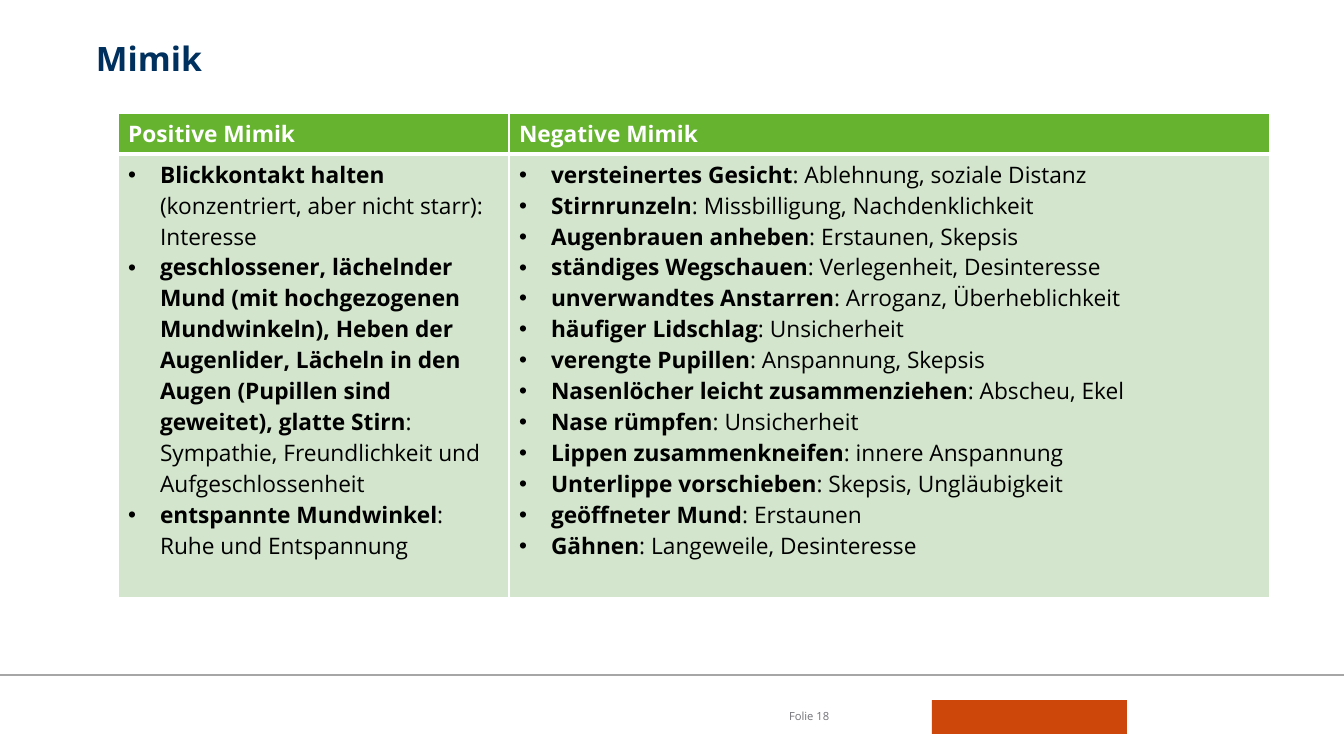
"""Build the slide "Mimik" comparing positive and negative facial expressions."""
from lxml import etree
from pptx import Presentation
from pptx.dml.color import RGBColor
from pptx.enum.shapes import MSO_CONNECTOR, MSO_SHAPE
from pptx.enum.text import MSO_ANCHOR
from pptx.oxml import parse_xml
from pptx.oxml.ns import nsdecls, qn
from pptx.util import Emu, Pt

STRAIGHT = MSO_CONNECTOR.STRAIGHT
RECTANGLE = MSO_SHAPE.RECTANGLE
TOP, MIDDLE = MSO_ANCHOR.TOP, MSO_ANCHOR.MIDDLE

THEME = {
    "font": "Open Sans",
    "navy": "00305D", "orange": "CE470A", "grey": "727277", "rule": "A6A6A6",
    "white": "FFFFFF", "black": "000000", "green": "65B32E", "pale": "D3E5CD",
    "title": 24, "body": 16.2, "page": 8,
}


def px(length):
    return Emu(round(length * 914400 / 100.8))


def style(run, size, color, bold):
    run.font.name = THEME["font"]
    run.font.size = Pt(THEME[size])
    run.font.color.rgb = RGBColor.from_string(THEME[color])
    run.font.bold = bold


prs = Presentation()
prs.slide_width, prs.slide_height = px(1344), px(756)
slide = prs.slides.add_slide(prs.slide_layouts[6])

footer_rule = slide.shapes.add_connector(STRAIGHT, px(0), px(675), px(1344), px(675))
footer_rule.line.color.rgb = RGBColor.from_string(THEME["rule"])
footer_rule.line.width = Pt(1)
etree.SubElement(footer_rule._element.spPr, qn("a:effectLst"))

footer_block = slide.shapes.add_shape(RECTANGLE, px(932), px(700), px(195), px(34))
footer_block.shadow.inherit = False
footer_block.fill.solid()
footer_block.fill.fore_color.rgb = RGBColor.from_string(THEME["orange"])
footer_block.line.fill.background()

labels = [
    ("Mimik", (96, 38, 1166, 76), TOP, "title", "navy", True),
    ("Folie 18", (789, 696, 78, 40), MIDDLE, "page", "grey", False),
]
for words, place, anchor, size, color, bold in labels:
    label = slide.shapes.add_textbox(*map(px, place)).text_frame
    label.margin_left = label.margin_right = label.margin_top = label.margin_bottom = 0
    label.vertical_anchor = anchor
    label.word_wrap = True
    label.text = words
    style(label.paragraphs[0].runs[0], size, color, bold)

expressions = {
    "Positive Mimik": [
        ("Blickkontakt halten ", "(konzentriert, aber nicht starr): Interesse"),
        ("geschlossener, lächelnder Mund (mit hochgezogenen Mundwinkeln), "
         "Heben der Augenlider, Lächeln in den Augen (Pupillen sind geweitet), glatte Stirn",
         ": Sympathie, Freundlichkeit und Aufgeschlossenheit"),
        ("entspannte Mundwinkel", ": Ruhe und Entspannung"),
    ],
    "Negative Mimik": [
        ("versteinertes Gesicht", ": Ablehnung, soziale Distanz"),
        ("Stirnrunzeln", ": Missbilligung, Nachdenklichkeit"),
        ("Augenbrauen anheben", ": Erstaunen, Skepsis"),
        ("ständiges Wegschauen", ": Verlegenheit, Desinteresse"),
        ("unverwandtes Anstarren", ": Arroganz, Überheblichkeit"),
        ("häufiger Lidschlag", ": Unsicherheit"),
        ("verengte Pupillen", ": Anspannung, Skepsis"),
        ("Nasenlöcher leicht zusammenziehen", ": Abscheu, Ekel"),
        ("Nase rümpfen", ": Unsicherheit"),
        ("Lippen zusammenkneifen", ": innere Anspannung"),
        ("Unterlippe vorschieben", ": Skepsis, Ungläubigkeit"),
        ("geöffneter Mund", ": Erstaunen"),
        ("Gähnen", ": Langeweile, Desinteresse"),
    ],
}
table = slide.shapes.add_table(2, 2, px(118), px(113), px(1152), px(485)).table
for row, height in zip(table.rows, (41, 444)):
    row.height = px(height)

for column, (width, (heading, signals)) in enumerate(zip((391, 761), expressions.items())):
    table.columns[column].width = px(width)
    header, body = table.cell(0, column), table.cell(1, column)
    header.text_frame.text = heading
    style(header.text_frame.paragraphs[0].runs[0], "body", "white", True)

    for index, (signal, meaning) in enumerate(signals):
        frame = body.text_frame
        paragraph = frame.add_paragraph() if index else frame.paragraphs[0]
        properties = paragraph._p.get_or_add_pPr()
        properties.set("marL", str(px(32)))
        properties.set("indent", str(-px(32)))
        etree.SubElement(properties, qn("a:buFont")).set("typeface", "Arial")
        etree.SubElement(properties, qn("a:buChar")).set("char", "•")
        for words, bold in ((signal, True), (meaning, False)):
            run = paragraph.add_run()
            run.text = words
            style(run, "body", "black", bold)

    for cell, fill, top, bottom in ((header, "green", 1, 3), (body, "pale", 3, 1)):
        cell.fill.solid()
        cell.fill.fore_color.rgb = RGBColor.from_string(THEME[fill])
        borders = {"lnL": 1, "lnR": 1, "lnT": top, "lnB": bottom}
        for position, (side, points) in enumerate(borders.items()):
            cell._tc.get_or_add_tcPr().insert(position, parse_xml(
                f'<a:{side} {nsdecls("a")} w="{Pt(points)}"><a:solidFill>'
                f'<a:srgbClr val="{THEME["white"]}"/></a:solidFill></a:{side}>'))

prs.save("out.pptx")
